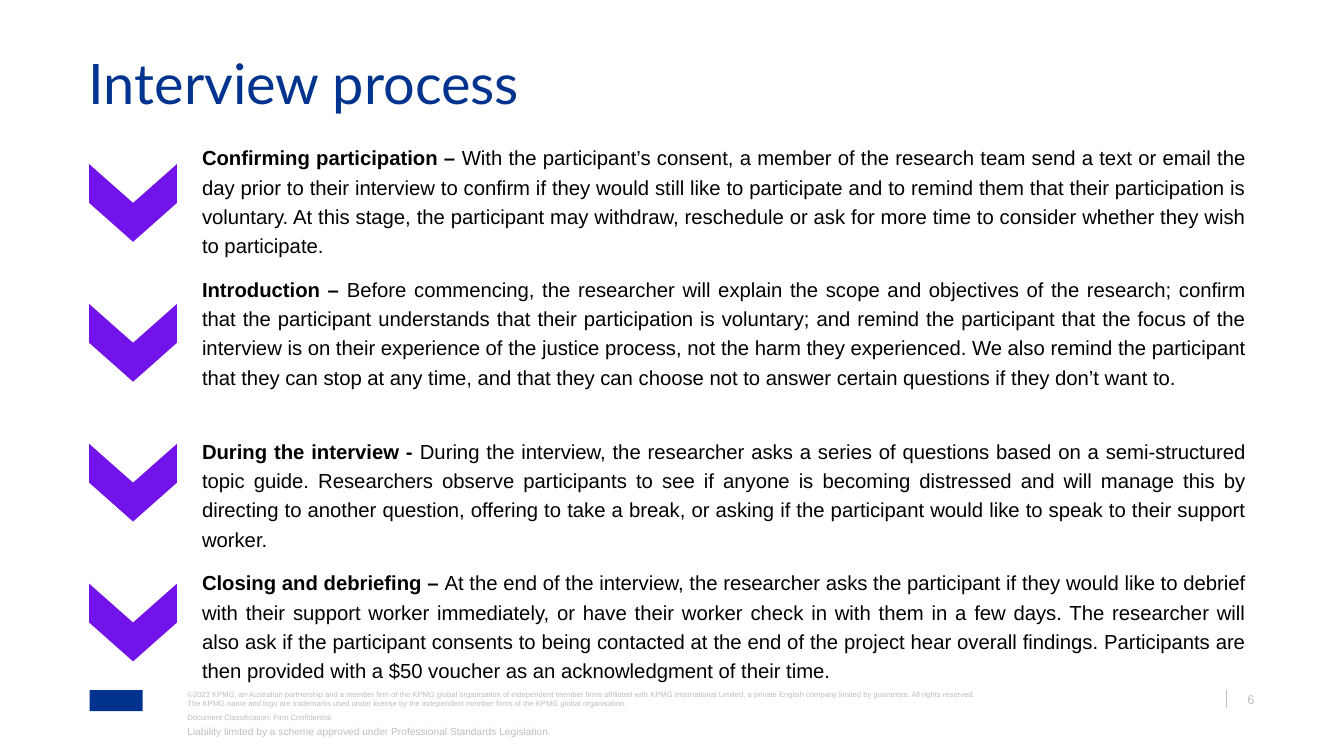
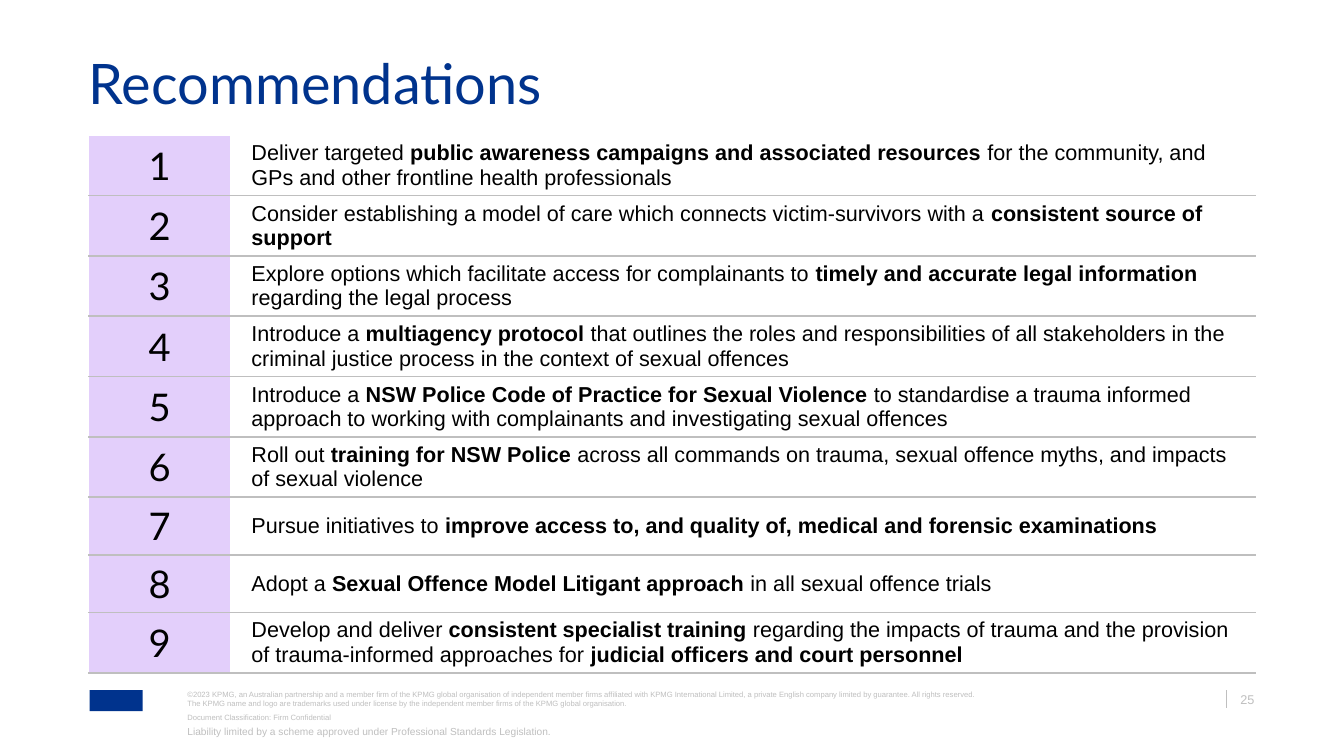
from lxml.etree import SubElement
from pptx import Presentation
from pptx.dml.color import RGBColor
from pptx.enum.shapes import MSO_CONNECTOR, MSO_SHAPE
from pptx.enum.text import MSO_ANCHOR, PP_ALIGN
from pptx.oxml.ns import qn
from pptx.util import Inches, Pt

NAVY = RGBColor(0x00, 0x33, 0x8D)
PURPLE = RGBColor(0x72, 0x13, 0xEA)
LILAC = RGBColor(0xE3, 0xCF, 0xFB)
GREY = RGBColor(0xBF, 0xBF, 0xBF)
BLACK = RGBColor(0, 0, 0)
WHITE = RGBColor(0xFF, 0xFF, 0xFF)

LEFT, CONTENT_WIDTH = 0.97, 12.76
FOOTER_LEFT, FOOTER_TOP = 2.05, 7.55
NO_MARGINS = (0, 0, 0, 0)

COPYRIGHT = [
    "©2023 KPMG, an Australian partnership and a member firm of the KPMG global organisation of "
    "independent member firms affiliated with KPMG International Limited, a private English company "
    "limited by guarantee. All rights reserved.",
    "The KPMG name and logo are trademarks used under license by the independent member firms of the "
    "KPMG global organisation.",
]
CLASSIFICATION = "Document Classification: Firm Confidential"
LIABILITY = "Liability limited by a scheme approved under Professional Standards Legislation."

# Bold passages stand between double asterisks; each stage has its text height.
STAGES = [
    (1.37, "**Confirming participation – **With the participant’s consent, a member of the research team "
           "send a text or email the day prior to their interview to confirm if they would still like to "
           "participate and to remind them that their participation is voluntary. At this stage, the "
           "participant may withdraw, reschedule or ask for more time to consider whether they wish to "
           "participate."),
    (1.7, "**Introduction – **Before commencing, the researcher will explain the scope and objectives of "
          "the research; confirm that the participant understands that their participation is voluntary; "
          "and remind the participant that the focus of the interview is on their experience of the "
          "justice process, not the harm they experienced. We also remind the participant that they can "
          "stop at any time, and that they can choose not to answer certain questions if they don’t want "
          "to."),
    (1.37, "**During the interview - **During the interview, the researcher asks a series of questions "
           "based on a semi-structured topic guide. Researchers observe participants to see if anyone is "
           "becoming distressed and will manage this by directing to another question, offering to take a "
           "break, or asking if the participant would like to speak to their support worker."),
    (1.37, "**Closing and debriefing – **At the end of the interview, the researcher asks the participant "
           "if they would like to debrief with their support worker immediately, or have their worker "
           "check in with them in a few days. The researcher will also ask if the participant consents to "
           "being contacted at the end of the project hear overall findings. Participants are then "
           "provided with a $50 voucher as an acknowledgment of their time."),
]

# Row height and wording of each recommendation.
RECOMMENDATIONS = [
    (0.66, "Deliver targeted **public awareness campaigns and associated resources **for the community, "
           "and GPs and other frontline health professionals"),
    (0.66, "Consider establishing a model of care which connects victim-survivors with a **consistent "
           "source of support**"),
    (0.66, "Explore options which facilitate access for complainants to **timely and accurate legal "
           "information **regarding the legal process"),
    (0.66, "Introduce a **multiagency protocol **that outlines the roles and responsibilities of all "
           "stakeholders in the criminal justice process in the context of sexual offences"),
    (0.66, "Introduce a **NSW Police Code of Practice for Sexual Violence **to standardise a trauma "
           "informed approach to working with complainants and investigating sexual offences"),
    (0.66, "Roll out **training for NSW Police **across all commands on trauma, sexual offence myths, "
           "and impacts of sexual violence"),
    (0.63, "Pursue initiatives to **improve access to, and quality of, medical and forensic "
           "examinations**"),
    (0.63, "Adopt a **Sexual Offence Model Litigant approach **in all sexual offence trials"),
    (0.66, "Develop and deliver **consistent specialist training **regarding the impacts of trauma and "
           "the provision of trauma-informed approaches for **judicial officers and court personnel**"),
]


def set_values(target, values):
    for name, value in values.items():
        setattr(target, name, value)


def set_margins(target, margins):
    sides = ("margin_left", "margin_top", "margin_right", "margin_bottom")
    set_values(target, dict(zip(sides, map(Inches, margins))))


def set_border(cell, side, color, width):
    """Draw one cell side; call in the order L, R, T, B and before the fill."""
    line = SubElement(cell._tc.get_or_add_tcPr(), qn(f"a:ln{side}"), w=str(Pt(width)))
    fill = SubElement(line, qn("a:solidFill"))
    SubElement(fill, qn("a:srgbClr"), val=str(color))


class Deck:
    STYLES = {
        "title": {"size": Pt(44), "name": "Lato", "color": NAVY},
        "body": {"size": Pt(16), "name": "Arial", "color": BLACK},
        "number": {"size": Pt(30), "name": "Lato", "color": BLACK},
        "row": {"size": Pt(17), "name": "Arial", "color": BLACK},
        "page": {"size": Pt(10), "name": "Arial", "color": GREY},
        "small": {"size": Pt(8), "name": "Arial", "color": GREY},
        "tiny": {"size": Pt(6), "name": "Arial", "color": GREY},
    }

    def __init__(self):
        self.prs = Presentation()
        set_values(self.prs, {"slide_width": Inches(14.7), "slide_height": Inches(8.27)})
        self.slide = None

    def new_slide(self, title, page):
        """Start a slide with its title and the shared footer."""
        self.slide = self.prs.slides.add_slide(self.prs.slide_layouts[6])
        self.text((LEFT, 0.73, CONTENT_WIDTH, 0.64), [title], "title", line_spacing=0.7)
        self.shape(MSO_SHAPE.RECTANGLE, (0.98, FOOTER_TOP, 0.58, 0.23), NAVY)
        self.text((FOOTER_LEFT, FOOTER_TOP, 10.12, 0.2), COPYRIGHT, "tiny")
        self.text((FOOTER_LEFT, 7.8, 7.45, 0.09), [CLASSIFICATION], "tiny")
        self.text((FOOTER_LEFT, 7.93, 4.06, 0.13), [LIABILITY], "small", wrap=False)
        self.rule((13.41, FOOTER_TOP), (13.41, 7.74))
        self.text((13.43, FOOTER_TOP, 0.29, 0.18), [str(page)], "page",
                  anchor=MSO_ANCHOR.BOTTOM, alignment=PP_ALIGN.RIGHT)

    def add_wording(self, paragraph, wording, style, **layout):
        """Fill a paragraph, turning **passages** bold."""
        set_values(paragraph, layout)
        for position, passage in enumerate(wording.split("**")):
            if not passage:
                continue
            run = paragraph.add_run()
            run.text = passage
            values = dict(self.STYLES[style], bold=position % 2 == 1)
            run.font.color.rgb = values.pop("color")
            set_values(run.font, values)

    def text(self, box, paragraphs, style, margins=NO_MARGINS, anchor=MSO_ANCHOR.TOP, wrap=True, **layout):
        frame = self.slide.shapes.add_textbox(*map(Inches, box)).text_frame
        set_values(frame, {"word_wrap": wrap, "vertical_anchor": anchor})
        set_margins(frame, margins)
        for index, wording in enumerate(paragraphs):
            paragraph = frame.add_paragraph() if index else frame.paragraphs[0]
            self.add_wording(paragraph, wording, style, **layout)

    def shape(self, kind, box, color, rotation=0):
        shape = self.slide.shapes.add_shape(kind, *map(Inches, box))
        shape.shadow.inherit = False
        shape.rotation = rotation
        shape.fill.solid()
        shape.fill.fore_color.rgb = color
        shape.line.fill.background()

    def rule(self, start, end):
        rule = self.slide.shapes.add_connector(MSO_CONNECTOR.STRAIGHT, *map(Inches, start + end))
        rule.line.color.rgb = GREY
        rule.line.width = Pt(0.5)
        SubElement(rule._element.spPr, qn("a:effectLst"))

    def numbered_table(self, left, top, widths, rows):
        height = sum(row_height for row_height, _ in rows)
        table = self.slide.shapes.add_table(
            len(rows), 2, *map(Inches, (left, top, sum(widths), height))).table
        set_values(table, {"first_row": False, "horz_banding": False})
        for column, width in zip(table.columns, widths):
            column.width = Inches(width)
        for index, (row_height, wording) in enumerate(rows):
            table.rows[index].height = Inches(row_height)
            number, advice = table.rows[index].cells
            for cell in (number, advice):
                cell.vertical_anchor = MSO_ANCHOR.MIDDLE
                for side in "LR":
                    set_border(cell, side, WHITE, 1)
                set_border(cell, "T", *((GREY, 1.5) if index else (WHITE, 1)))
                set_border(cell, "B", GREY, 1.5)
            number.fill.solid()
            number.fill.fore_color.rgb = LILAC
            self.add_wording(number.text_frame.paragraphs[0], str(index + 1), "number",
                             alignment=PP_ALIGN.CENTER)
            advice.fill.background()
            set_margins(advice, (0.03, 0.03, 0.07, 0.03))
            paragraph = advice.text_frame.paragraphs[0]
            paragraph._p.get_or_add_pPr().set("marL", str(Inches(0.2)))
            self.add_wording(paragraph, wording, "row")


def build_interview_process(deck):
    deck.new_slide("Interview process", 6)
    text_top, text_gap = 1.48, 0.07
    for index, (height, wording) in enumerate(STAGES):
        deck.shape(MSO_SHAPE.CHEVRON, (1.03, 1.74 + 1.53 * index, 0.85, 0.96), PURPLE, rotation=90)
        deck.text((2.1, text_top, 11.64, height), [wording], "body", (0.11, 0.06, 0.11, 0.06),
                  alignment=PP_ALIGN.JUSTIFY, line_spacing=1.2)
        text_top += height + text_gap


def build_recommendations(deck):
    deck.new_slide("Recommendations", 25)
    deck.numbered_table(LEFT, 1.48, (1.55, 11.21), RECOMMENDATIONS)


def main():
    deck = Deck()
    build_interview_process(deck)
    build_recommendations(deck)
    deck.prs.save("out.pptx")


if __name__ == "__main__":
    main()
